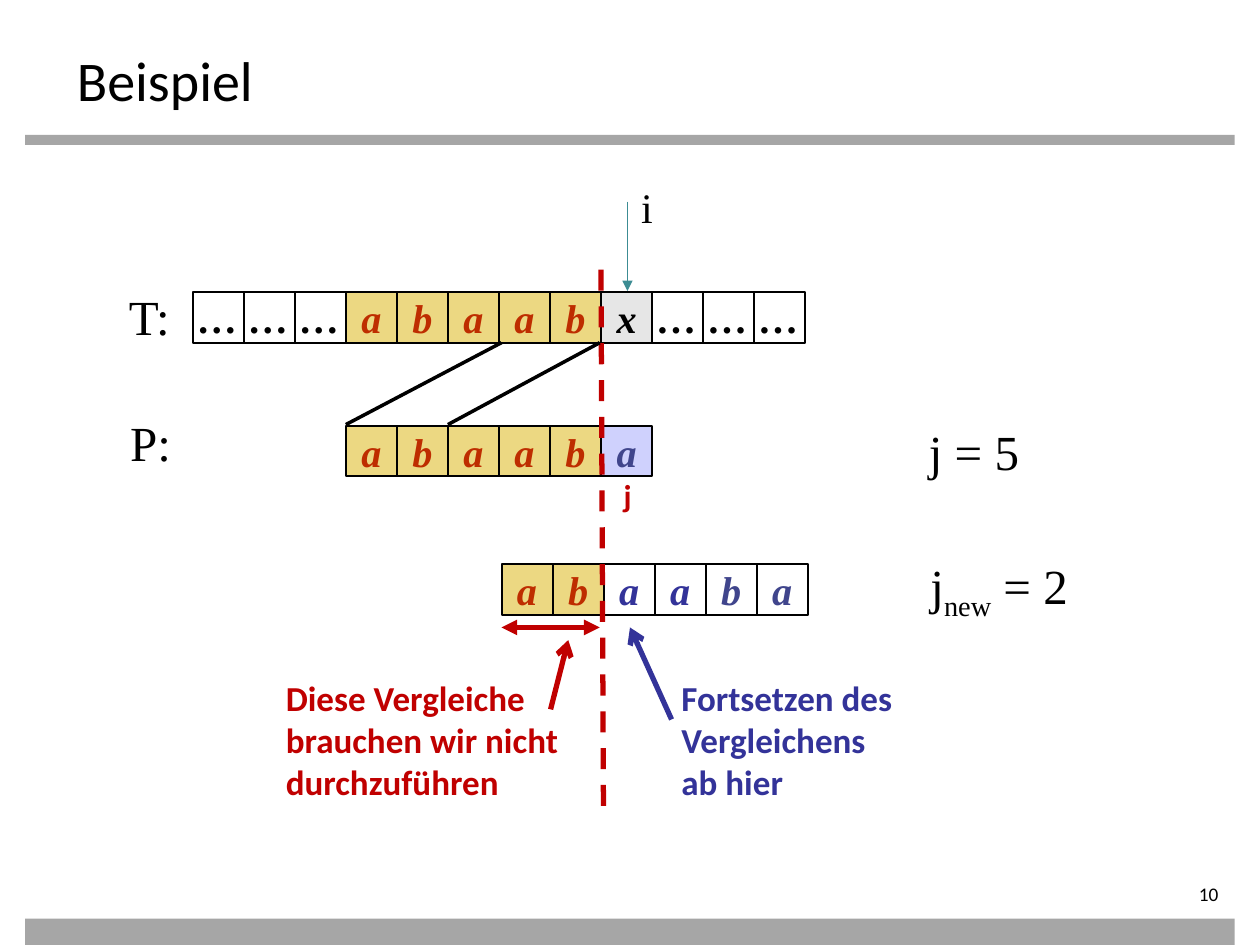
from lxml.etree import SubElement
from pptx import Presentation
from pptx.dml.color import RGBColor
from pptx.enum.dml import MSO_LINE
from pptx.enum.shapes import MSO_CONNECTOR, MSO_SHAPE
from pptx.enum.text import MSO_ANCHOR, PP_ALIGN
from pptx.oxml.ns import qn
from pptx.util import Inches, Pt

SERIF, SANS = "Times New Roman", "Calibri"
BLACK, WHITE, GREY = "000000", "FFFFFF", "A6A6A6"
RED, BLUE, TEAL = "C00000", "333399", "3C8C93"
MATCH_FILL, MATCH_TEXT, SLATE = "ECD882", "BE2D00", "40458C"
GRID_LEFT, CELL_WIDTH, CELL_HEIGHT = 1.53, 0.405, 0.4
TEXT_ROW, PATTERN_ROW, SHIFTED_ROW = 2.32, 3.38, 4.48
SHIFTED_START = 6.05  # the shifted pattern sits slightly right of column 6

MATCH = (MATCH_FILL, MATCH_TEXT)
DOTS = [("…", None, BLACK)] * 3
PREFIX = [(letter, *MATCH) for letter in "abaab"]
TEXT_CELLS = DOTS + PREFIX + [("x", "E6E6E6", BLACK)] + DOTS
PATTERN_CELLS = PREFIX + [("a", "CFD1FD", SLATE)]
SHIFTED_CELLS = [("a", *MATCH), ("b", *MATCH), ("a", None, BLUE),
                 ("a", None, BLUE), ("b", None, SLATE), ("a", WHITE, SLATE)]


def colour(value):
    return RGBColor.from_string(value)


def column(number):
    return GRID_LEFT + number * CELL_WIDTH


def write(shape, text, *, size, font=SANS, color=BLACK, bold=False, italic=False,
          align=PP_ALIGN.LEFT, anchor=MSO_ANCHOR.TOP, wrap=False, insets=None):
    """Fill a shape with text; a part between underscores is set as subscript."""
    frame = shape.text_frame
    frame.word_wrap = wrap
    frame.vertical_anchor = anchor
    if insets is not None:
        (frame.margin_left, frame.margin_top,
         frame.margin_right, frame.margin_bottom) = map(Inches, insets)
    for number, line in enumerate(text.split("\n")):
        para = frame.add_paragraph() if number else frame.paragraphs[0]
        para.alignment = align
        for position, part in enumerate(line.split("_")):
            span = para.add_run()
            span.text = part
            span.font.size, span.font.name = Pt(size), font
            span.font.bold, span.font.italic = bold, italic
            span.font.color.rgb = colour(color)
            if position % 2:
                span.font._element.set("baseline", "-25000")


def add_text(page, box, text, **form):
    write(page.shapes.add_textbox(*map(Inches, box)), text, **form)


def add_rectangle(page, box, fill=None, line=None):
    shape = page.shapes.add_shape(MSO_SHAPE.RECTANGLE, *map(Inches, box))
    shape.shadow.inherit = False
    if fill:
        shape.fill.solid()
        shape.fill.fore_color.rgb = colour(fill)
    else:
        shape.fill.background()
    if line:
        shape.line.color.rgb = colour(line)
        shape.line.width = Pt(1.13)
    else:
        shape.line.fill.background()
    return shape


def add_line(page, start, end, color, width, dash=None, head=None, tail=None):
    line = page.shapes.add_connector(MSO_CONNECTOR.STRAIGHT,
                                     *map(Inches, (*start, *end)))
    line.line.color.rgb = colour(color)
    line.line.width = Pt(width)
    if dash:
        line.line.dash_style = dash
    outline = line.line._get_or_add_ln()
    for tag, kind in (("a:headEnd", head), ("a:tailEnd", tail)):
        if kind:
            SubElement(outline, qn(tag), type=kind)
    SubElement(line._element.spPr, qn("a:effectLst"))


def add_frame(page, width, height):
    """Place the title, the two grey bars and the page number."""
    for top, thickness in ((1.07, 0.08), (height - 0.21, 0.21)):
        add_rectangle(page, (0.2, top, width - 0.4, thickness), GREY)
    title = page.shapes.title
    title.left, title.top, title.width, title.height = map(
        Inches, (0.51, 0.28, 9, 0.55))
    write(title, "Beispiel", size=32, wrap=True, insets=(0.1, 0.08, 0.1, 0))
    add_text(page, (width - 1.3, height - 0.5, 1.1, 0.22), "10", size=11,
             align=PP_ALIGN.RIGHT, wrap=True, insets=(0, 0, 0.13, 0))


def add_cell_row(page, start, top, cells):
    for number, (letter, fill, color) in enumerate(cells):
        box = (column(start + number), top, CELL_WIDTH, CELL_HEIGHT)
        write(add_rectangle(page, box, fill, BLACK), letter,
              size=23, font=SERIF, color=color, bold=True, italic=True,
              align=PP_ALIGN.CENTER, anchor=MSO_ANCHOR.MIDDLE, insets=(0, 0, 0, 0))


def add_labels(page):
    labels = (("T:", 0.91, 2.22, 0.55), ("P:", 0.93, 3.22, 0.53),
              ("j_new_ = 2", 7.25, 4.39, 1.36), ("j = 5", 7.27, 3.29, 0.92))
    for text, left, top, width in labels:
        add_text(page, (left, top, width, 0.57), text, size=28, font=SERIF,
                 align=PP_ALIGN.CENTER, anchor=MSO_ANCHOR.MIDDLE)
    add_text(page, (4.99, 1.39, 0.29, 0.5), "i", size=24, font=SERIF,
             align=PP_ALIGN.CENTER)
    add_text(page, (4.85, 3.73, 0.28, 0.4), "j", size=18, color=RED, bold=True)


def add_comments(page):
    comments = (
        ("Diese Vergleiche\nbrauchen wir nicht\ndurchzuführen", 2.17, 2.53, RED),
        ("Fortsetzen des\nVergleichens\nab hier", 5.31, 2.02, BLUE))
    for text, left, width, color in comments:
        box = add_rectangle(page, (left, 5.32, width, 1.11), WHITE)
        write(box, text, size=20, color=color, bold=True)


def add_lines(page):
    mismatch, shifted = column(8), column(SHIFTED_START)
    text_bottom = TEXT_ROW + CELL_HEIGHT
    add_line(page, (4.98, 1.6), (4.98, 2.31), TEAL, 1, tail="triangle")
    add_line(page, (mismatch, 2.14), (mismatch + 0.02, 6.51), RED, 3,
             dash=MSO_LINE.DASH)
    add_line(page, (shifted, 4.98), (mismatch - 0.01, 4.98), RED, 3,
             head="triangle", tail="triangle")
    add_line(page, (4.37, 5.63), (4.51, 5.08), RED, 3, tail="arrow")
    add_line(page, (5.33, 5.71), (5, 4.98), BLUE, 3, tail="arrow")
    for start, end in ((column(3), shifted), (column(5), mismatch - 0.01)):
        add_line(page, (start, PATTERN_ROW - 0.01), (end, text_bottom), BLACK, 2)


def main():
    width, height = 10, 7.5
    deck = Presentation()
    deck.slide_width, deck.slide_height = Inches(width), Inches(height)
    page = deck.slides.add_slide(deck.slide_layouts[5])
    add_frame(page, width, height)
    add_labels(page)
    add_comments(page)
    add_cell_row(page, 0, TEXT_ROW, TEXT_CELLS)
    add_cell_row(page, 3, PATTERN_ROW, PATTERN_CELLS)
    add_cell_row(page, SHIFTED_START, SHIFTED_ROW, SHIFTED_CELLS)
    add_lines(page)
    deck.save("out.pptx")


if __name__ == "__main__":
    main()
